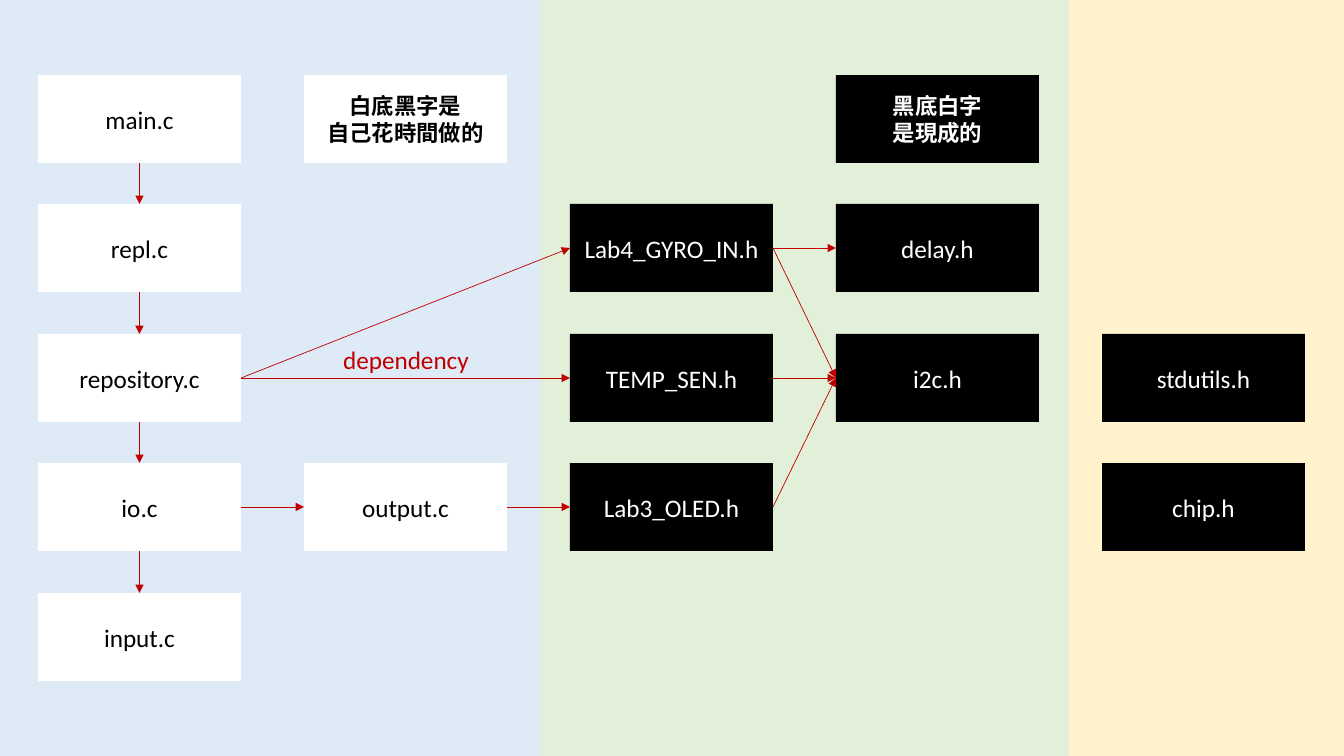
import pptx
import pptx.dml.color
import pptx.enum.shapes
import pptx.enum.text
import pptx.oxml.ns
import pptx.util
from lxml import etree

RGBColor = pptx.dml.color.RGBColor
WHITE = RGBColor(0xFF, 0xFF, 0xFF)
BLACK = RGBColor(0x00, 0x00, 0x00)
RED = RGBColor(0xC0, 0x00, 0x00)
BLUE_BAND = RGBColor(0xDE, 0xEB, 0xF7)
GREEN_BAND = RGBColor(0xE2, 0xF0, 0xD9)
YELLOW_BAND = RGBColor(0xFF, 0xF2, 0xCC)

# Content: bands as (left, right, colour), files as name: (column, row)
BANDS = [(1069, 1344, YELLOW_BAND), (540, 1069, GREEN_BAND), (0, 540, BLUE_BAND)]
OWN_FILES = {
    "main.c": (0, 0), "repl.c": (0, 1), "repository.c": (0, 2),
    "io.c": (0, 3), "input.c": (0, 4), "output.c": (1, 3),
}
READY_FILES = {
    "Lab4_GYRO_IN.h": (2, 1), "TEMP_SEN.h": (2, 2), "Lab3_OLED.h": (2, 3),
    "delay.h": (3, 1), "i2c.h": (3, 2), "stdutils.h": (4, 2), "chip.h": (4, 3),
}
OWN_LEGEND = {"白底黑字是\n自己花時間做的": (1, 0)}
READY_LEGEND = {"黑底白字\n是現成的": (3, 0)}
DEPENDENCIES = [
    ("main.c", "repl.c"), ("repl.c", "repository.c"),
    ("repository.c", "io.c"), ("io.c", "input.c"),
    ("io.c", "output.c"), ("output.c", "Lab3_OLED.h"),
    ("repository.c", "Lab4_GYRO_IN.h"), ("repository.c", "TEMP_SEN.h"),
    ("Lab4_GYRO_IN.h", "delay.h"), ("Lab4_GYRO_IN.h", "i2c.h"),
    ("TEMP_SEN.h", "i2c.h"), ("Lab3_OLED.h", "i2c.h"),
]

# Grid in px
SLIDE_WIDTH, SLIDE_HEIGHT = 1344, 756
GRID_LEFT, GRID_TOP = 38, 75
COLUMN_STEP, FOUR_ROWS = 266, 518
BOX_WIDTH, BOX_HEIGHT = 203, 88
TOP, LEFT, BOTTOM, RIGHT = range(4)

FILE_FONT = {"name": "Calibri", "size": pptx.util.Pt(18), "bold": False}
LEGEND_FONT = {"name": "Noto Sans CJK SC", "size": pptx.util.Pt(16), "bold": True}


def px(length):
    return pptx.util.Emu(round(length * 914400 / 100.8))


def add_rectangle(slide, left, top, width, height, fill):
    shape = slide.shapes.add_shape(
        pptx.enum.shapes.MSO_SHAPE.RECTANGLE, px(left), px(top), px(width), px(height))
    shape.shadow.inherit = False
    shape.fill.solid()
    shape.fill.fore_color.rgb = fill
    shape.line.fill.background()
    return shape


def write_text(shape, text, font_format, colour, frame_format):
    frame = shape.text_frame
    frame.text = text
    for name, value in frame_format.items():
        setattr(frame, name, value)
    for paragraph in frame.paragraphs:
        paragraph.alignment = pptx.enum.text.PP_ALIGN.CENTER
        for run in paragraph.runs:
            for name, value in font_format.items():
                setattr(run.font, name, value)
            run.font.color.rgb = colour
            east_asian = etree.SubElement(run.font._element, pptx.oxml.ns.qn("a:ea"))
            east_asian.set("typeface", font_format["name"])


def add_arrow(slide, source, target):
    sides = (BOTTOM, TOP) if source.left == target.left else (RIGHT, LEFT)
    arrow = slide.shapes.add_connector(
        pptx.enum.shapes.MSO_CONNECTOR.STRAIGHT, 0, 0, 0, 0)
    arrow.begin_connect(source, sides[0])
    arrow.end_connect(target, sides[1])
    arrow.line.color.rgb = RED
    arrow.line.width = pptx.util.Pt(0.5)
    line = arrow.line._get_or_add_ln()
    etree.SubElement(line, pptx.oxml.ns.qn("a:tailEnd")).set("type", "triangle")
    etree.SubElement(arrow._element.spPr, pptx.oxml.ns.qn("a:effectLst"))


def main():
    presentation = pptx.Presentation()
    presentation.slide_width = px(SLIDE_WIDTH)
    presentation.slide_height = px(SLIDE_HEIGHT)
    slide = presentation.slides.add_slide(presentation.slide_layouts[6])

    # Background bands
    for left, right, colour in BANDS:
        add_rectangle(slide, left, 0, right - left, SLIDE_HEIGHT, colour)

    # File and legend boxes
    box_frame = {
        "word_wrap": True, "margin_left": px(5), "margin_right": px(5),
        "vertical_anchor": pptx.enum.text.MSO_ANCHOR.MIDDLE,
    }
    boxes = {}
    for group, fill, colour, font_format in [
        (OWN_FILES, WHITE, BLACK, FILE_FONT),
        (READY_FILES, BLACK, WHITE, FILE_FONT),
        (OWN_LEGEND, WHITE, BLACK, LEGEND_FONT),
        (READY_LEGEND, BLACK, WHITE, LEGEND_FONT),
    ]:
        for text, (column, row) in group.items():
            left = GRID_LEFT + column * COLUMN_STEP
            top = GRID_TOP + row * FOUR_ROWS // 4
            box = add_rectangle(slide, left, top, BOX_WIDTH, BOX_HEIGHT, fill)
            write_text(box, text, font_format, colour, box_frame)
            boxes[text] = box

    # Dependency arrows
    for source, target in DEPENDENCIES:
        add_arrow(slide, boxes[source], boxes[target])

    # Arrow label
    label = slide.shapes.add_textbox(px(332), px(339), px(148), px(40))
    write_text(label, "dependency", FILE_FONT, RED, {"word_wrap": False})

    presentation.save("out.pptx")


if __name__ == "__main__":
    main()
